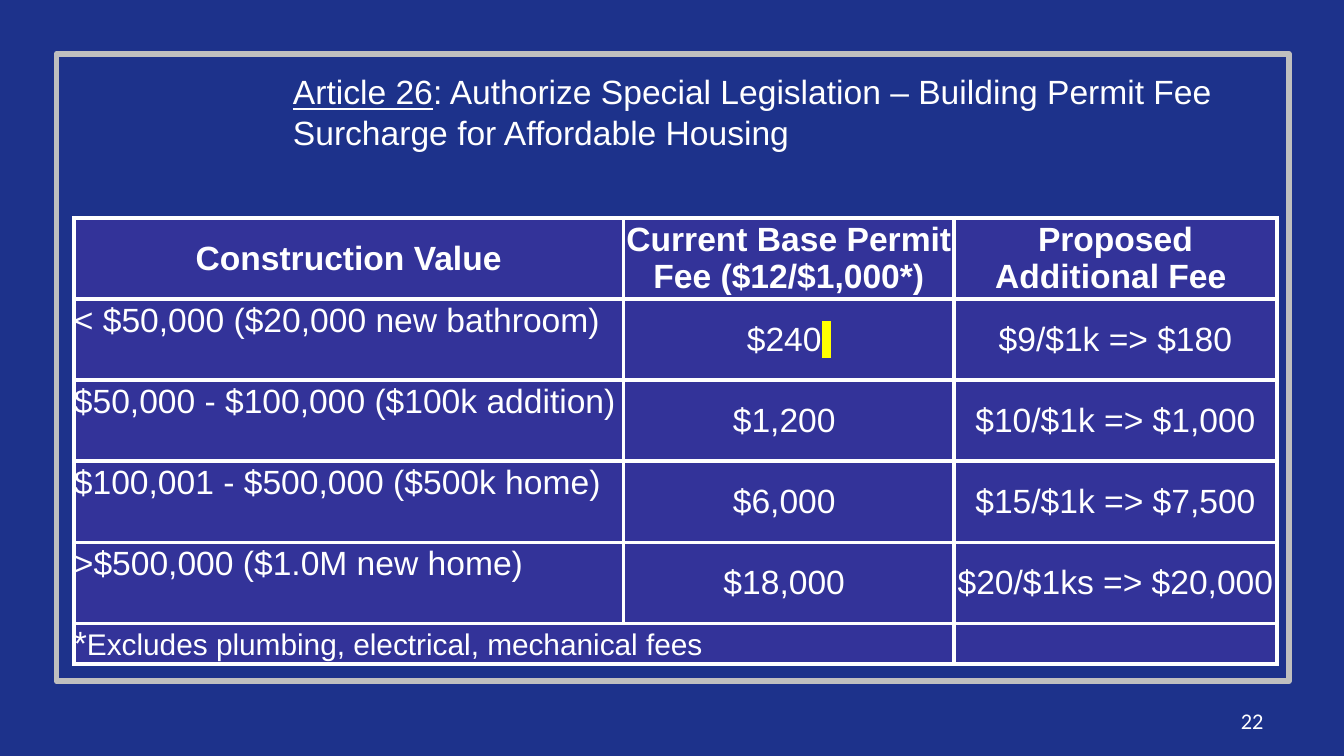
"""Build the building permit fee surcharge slide."""
from dataclasses import dataclass

from lxml import etree
from pptx import Presentation
from pptx.dml.color import RGBColor
from pptx.enum import shapes, text
from pptx.oxml import ns
from pptx.slide import Slide
from pptx.util import Inches, Pt

ROWS = [
    ("Construction Value", "Current Base Permit Fee ($12/$1,000*)", "Proposed Additional Fee "),
    ("< $50,000 ($20,000 new bathroom)", "$240", "$9/$1k => $180"),
    ("$50,000 - $100,000 ($100k addition)", "$1,200 ", "$10/$1k => $1,000"),
    ("$100,001 - $500,000 ($500k home)", "$6,000 ", "$15/$1k => $7,500"),
    (">$500,000 ($1.0M new home)", "$18,000 ", "$20/$1ks => $20,000"),
    ("*", "", ""),
]
FOOTNOTE = "Excludes plumbing, electrical, mechanical fees"
COLUMN_WIDTHS = (4.09, 2.46, 2.4)
ROW_HEIGHTS = [3.02 / 5] * 5 + [0.3]


def color(value):
    return RGBColor.from_string(value)


def child(parent, tag, **attributes):
    return etree.SubElement(parent, ns.qn(tag), attributes)


@dataclass
class SlideBuilder:
    slide: Slide
    ink: str = "FFFFFF"
    background: str = "1D328B"
    cell_fill: str = "333399"
    frame_line: str = "BFBFBF"
    highlight: str = "FFFF00"

    def paint_background(self):
        fill = self.slide.background.fill
        fill.solid()
        fill.fore_color.rgb = color(self.background)

    def style(self, run, size=18, name="Arial", bold=False):
        run.font.size = Pt(size)
        run.font.name = name
        run.font.bold = bold
        run.font.color.rgb = color(self.ink)

    def add_run(self, paragraph, content, size=18):
        run = paragraph.add_run()
        run.text = content
        self.style(run, size)
        return run

    def frame(self, left, top, width, height):
        shape = self.slide.shapes.add_shape(
            shapes.MSO_SHAPE.RECTANGLE, Inches(left), Inches(top), Inches(width), Inches(height))
        shape.shadow.inherit = False
        shape.fill.background()
        shape.line.color.rgb = color(self.frame_line)
        shape.line.width = Pt(3)

    def title(self, lead, rest, left, top, width, height):
        shape = self.slide.shapes.title
        shape.left, shape.top = Inches(left), Inches(top)
        shape.width, shape.height = Inches(width), Inches(height)
        frame = shape.text_frame
        frame.word_wrap = True
        frame.auto_size = text.MSO_AUTO_SIZE.SHAPE_TO_FIT_TEXT
        frame.vertical_anchor = text.MSO_ANCHOR.TOP
        paragraph = frame.paragraphs[0]
        paragraph.alignment = text.PP_ALIGN.LEFT
        self.add_run(paragraph, lead).font.underline = True
        self.add_run(paragraph, rest)

    def page_number(self, number, left, top, width, height):
        shape = self.slide.shapes.add_textbox(
            Inches(left), Inches(top), Inches(width), Inches(height))
        frame = shape.text_frame
        frame.word_wrap = True
        frame.vertical_anchor = text.MSO_ANCHOR.MIDDLE
        frame.text = number
        paragraph = frame.paragraphs[0]
        paragraph.alignment = text.PP_ALIGN.RIGHT
        self.style(paragraph.runs[0], 12, "Calibri")

    def format_cell(self, cell):
        cell.margin_left = cell.margin_right = cell.margin_top = cell.margin_bottom = 0
        cell.vertical_anchor = text.MSO_ANCHOR.MIDDLE
        properties = cell._tc.get_or_add_tcPr()
        for side in ("a:lnL", "a:lnR", "a:lnT", "a:lnB"):
            line = child(properties, side, w=str(Pt(2.25)))
            child(child(line, "a:solidFill"), "a:srgbClr", val=self.ink)
        cell.fill.solid()
        cell.fill.fore_color.rgb = color(self.cell_fill)

    def highlight_run(self, run):
        marker = etree.Element(ns.qn("a:highlight"))
        child(marker, "a:srgbClr", val=self.highlight)
        run.font._element.find(ns.qn("a:solidFill")).addnext(marker)

    def table(self, rows, widths, heights, left, top):
        table = self.slide.shapes.add_table(
            len(rows), len(widths), Inches(left), Inches(top),
            Inches(sum(widths)), Inches(sum(heights))).table
        for column, width in zip(table.columns, widths):
            column.width = Inches(width)
        last = len(rows) - 1
        for i, (row, height) in enumerate(zip(rows, heights)):
            table.rows[i].height = Inches(height)
            for j, content in enumerate(row):
                cell = table.cell(i, j)
                self.format_cell(cell)
                paragraph = cell.text_frame.paragraphs[0]
                if content:
                    paragraph.text = content
                    self.style(paragraph.runs[0], bold=i == 0)
                if i == 0 or j > 0:
                    paragraph.alignment = text.PP_ALIGN.CENTER
                elif i < last:
                    cell.vertical_anchor = text.MSO_ANCHOR.TOP
                    cell.margin_top = Inches(0.02)
        table.cell(last, 0).merge(table.cell(last, 1))
        return table


def main():
    presentation = Presentation()
    presentation.slide_width = Inches(10)
    presentation.slide_height = Inches(10 * 9 / 16)
    builder = SlideBuilder(presentation.slides.add_slide(presentation.slide_layouts[5]))
    builder.paint_background()
    builder.frame(0.42, 0.4, 9.17, 4.67)
    builder.page_number("22", 7.17, 5.21, 2.33, 0.3)
    builder.title(
        "Article 26",
        ": Authorize Special Legislation – Building Permit Fee Surcharge for Affordable Housing",
        2.08, 0.48, 7.42, 0.71)
    table = builder.table(ROWS, COLUMN_WIDTHS, ROW_HEIGHTS, 0.55, 1.62)
    base_fee = table.cell(1, 1).text_frame.paragraphs[0]
    builder.highlight_run(builder.add_run(base_fee, " "))
    builder.add_run(table.cell(5, 0).text_frame.paragraphs[0], FOOTNOTE, 16)
    presentation.save("out.pptx")


if __name__ == "__main__":
    main()
